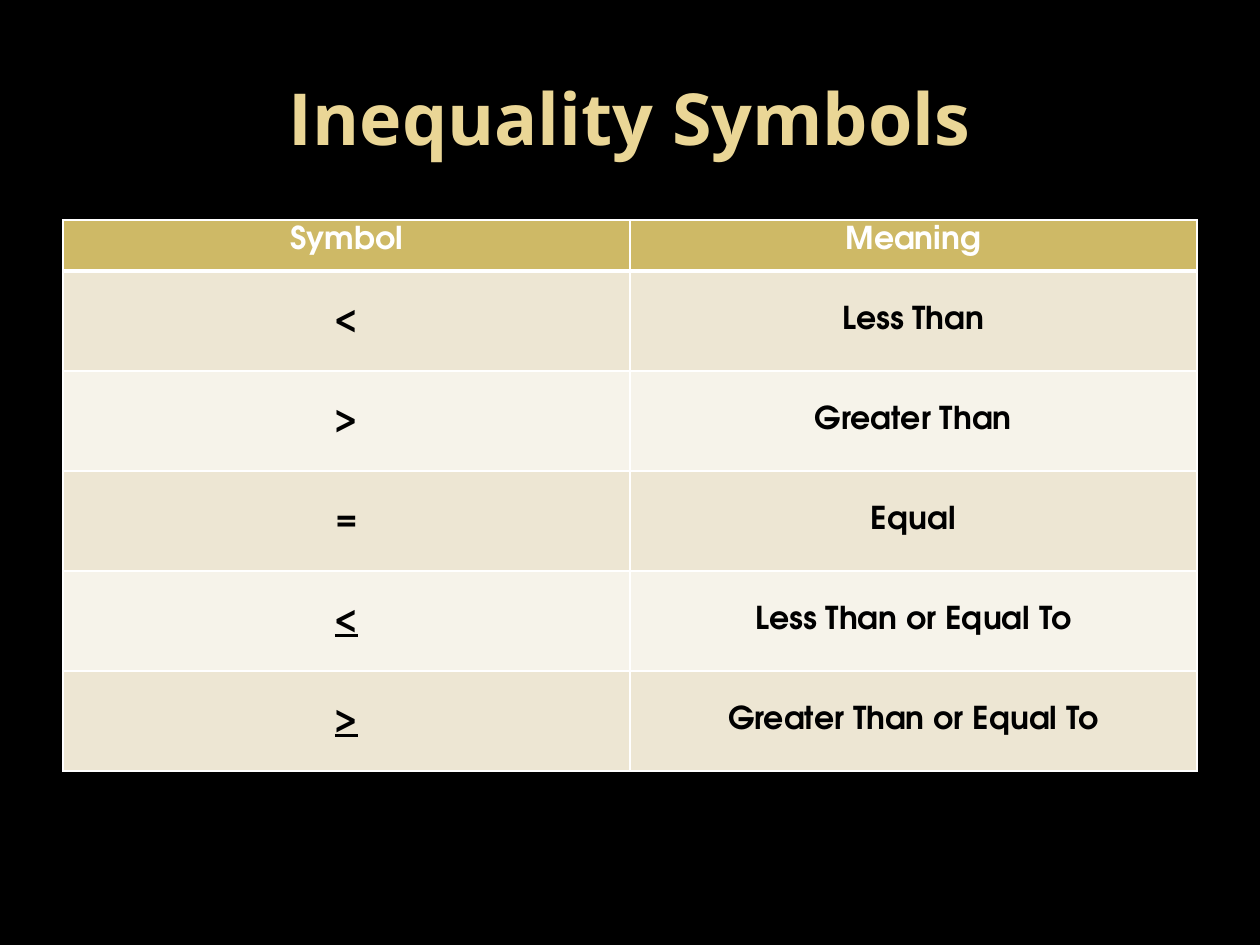
"""Build the Inequality Symbols slide with its table of symbols and meanings."""
from lxml import etree
from pptx import Presentation
from pptx.dml.color import RGBColor
from pptx.enum.text import MSO_ANCHOR, PP_ALIGN
from pptx.oxml.ns import qn
from pptx.util import Emu, Pt

CENTER = PP_ALIGN.CENTER
TOP, MIDDLE = MSO_ANCHOR.TOP, MSO_ANCHOR.MIDDLE
PX = 914400 // 126
THEME = {
    "bg": "000000", "title": "EAD696", "header": "CEB966",
    "bands": ("EDE6D3", "F6F3EA"), "light": "FFFFFF", "dark": "000000",
    "title_font": "Open Sans", "body_font": "TeX Gyre Adventor",
    "title_size": 41, "body_size": 18,
}
ROWS = [
    ("Symbol", "Meaning", False),
    ("<", "Less Than", False),
    (">", "Greater Than", False),
    ("=", "Equal", False),
    ("<", "Less Than or Equal To", True),
    (">", "Greater Than or Equal To", True),
]
LEFT, TABLE_TOP, COL_W, HEADER_H, ROW_H = 63, 220, 567, 51, 100
PAD, BODY_PAD = 6, 35


def write(tf, text, font=THEME["body_font"], size=THEME["body_size"],
          color=THEME["dark"], underline=False):
    p = tf.paragraphs[0]
    p.alignment = CENTER
    r = p.add_run()
    r.text = text
    r.font.name = font
    r.font.size = Pt(size)
    r.font.bold = True
    r.font.underline = underline
    r.font.color.rgb = RGBColor.from_string(color)


def add_border(cell, side, width):
    ln = etree.SubElement(cell._tc.get_or_add_tcPr(), qn(f"a:ln{side}"), w=str(Pt(width)))
    fill = etree.SubElement(ln, qn("a:solidFill"))
    etree.SubElement(fill, qn("a:srgbClr"), val=THEME["light"])


prs = Presentation()
prs.slide_width, prs.slide_height = Emu(1260 * PX), Emu(945 * PX)
s = prs.slides.add_slide(prs.slide_layouts[6])
s.background.fill.solid()
s.background.fill.fore_color.rgb = RGBColor.from_string(THEME["bg"])

sp = s.shapes.add_textbox(63 * PX, 38 * PX, 1134 * PX, 158 * PX)
tf = sp.text_frame
tf.word_wrap = True
tf.vertical_anchor = MIDDLE
write(tf, "Inequality Symbols", font=THEME["title_font"],
      size=THEME["title_size"], color=THEME["title"])

table_h = HEADER_H + ROW_H * (len(ROWS) - 1)
table = s.shapes.add_table(len(ROWS), 2, LEFT * PX, TABLE_TOP * PX,
                           2 * COL_W * PX, table_h * PX).table
for col in table.columns:
    col.width = Emu(COL_W * PX)

for i, (symbol, meaning, underline) in enumerate(ROWS):
    header = i == 0
    table.rows[i].height = Emu((HEADER_H if header else ROW_H) * PX)
    fill = THEME["header"] if header else THEME["bands"][(i - 1) % 2]
    for j, text in enumerate((symbol, meaning)):
        cell = table.cell(i, j)
        for side in "LRTB":
            thick = (i == 0 and side == "B") or (i == 1 and side == "T")
            add_border(cell, side, 3 if thick else 1)
        cell.fill.solid()
        cell.fill.fore_color.rgb = RGBColor.from_string(fill)
        cell.vertical_anchor = TOP
        cell.margin_top = Emu((PAD if header else BODY_PAD) * PX)
        cell.margin_bottom = Emu(PAD * PX)
        write(cell.text_frame, text, underline=underline and j == 0,
              color=THEME["light"] if header else THEME["dark"])

prs.save("out.pptx")
